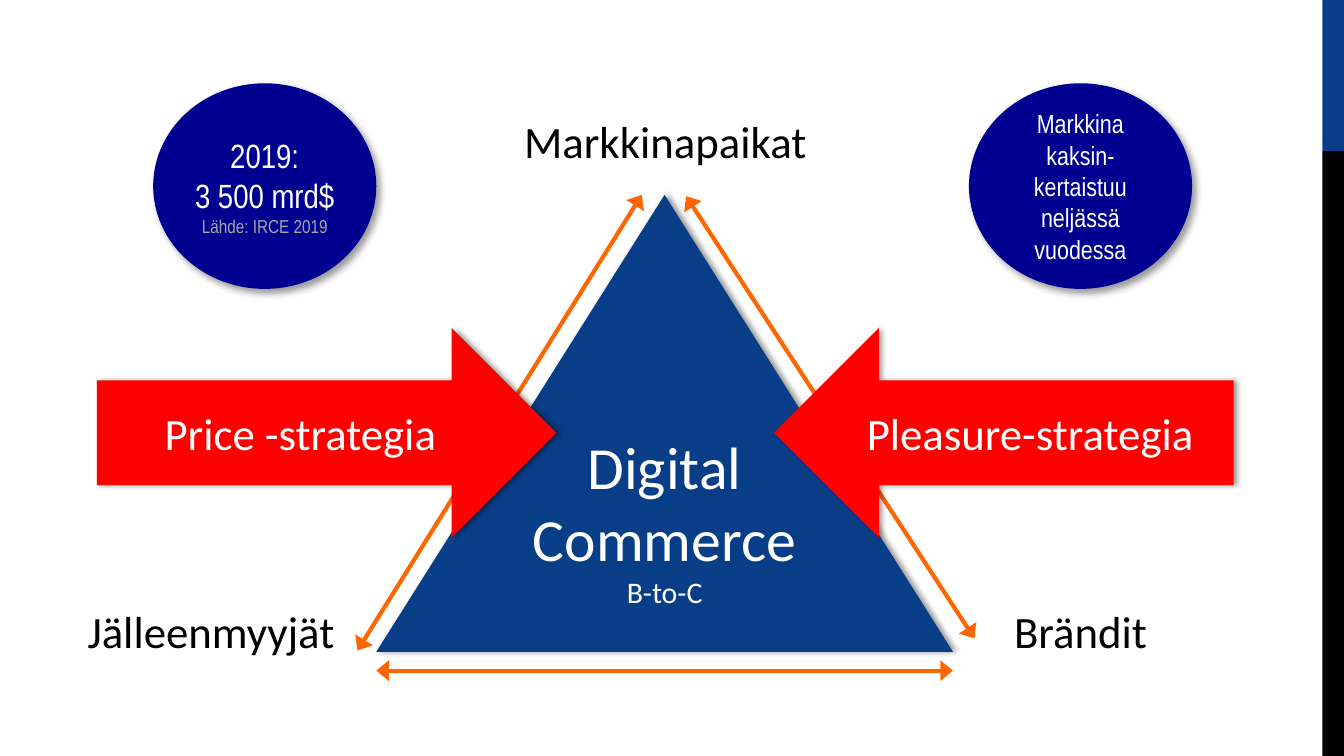
from dataclasses import dataclass
from lxml.etree import SubElement
from pptx import Presentation
from pptx.dml.color import RGBColor
from pptx.enum.shapes import MSO_CONNECTOR, MSO_SHAPE
from pptx.enum.text import MSO_ANCHOR, MSO_AUTO_SIZE, PP_ALIGN
from pptx.oxml.ns import qn
from pptx.util import Inches, Pt


@dataclass(frozen=True)
class Theme:
    blue: str = "073E87"
    navy: str = "000090"
    red: str = "FF0000"
    orange: str = "FF6600"
    black: str = "000000"
    white: str = "FFFFFF"
    gray: str = "A6A6A6"
    body: str = "Calibri"
    narrow: str = "Arial Narrow"
    hero: int = 32
    label: int = 24
    fact: int = 18
    sub: int = 16
    note: int = 14
    source: int = 10
    line: float = 2.25


THEME = Theme()
WIDE = 10
HIGH = WIDE * 9 / 16
SOFT = (3.1, 1.8, 0)  # blur, distance, angle
DEEP = (4, 3, 45)
INSET = (0.1, 0.05)
TIGHT = (0, 0.05)


def assign(item, values):
    for name, value in values.items():
        setattr(item, name, value)


def write(shape, lines, face, anchor=MSO_ANCHOR.MIDDLE, inset=INSET):
    """Fill a shape with centred lines, each a (text, size, colour)."""
    side, edge = map(Inches, inset)
    frame = shape.text_frame
    assign(frame, dict(word_wrap=True, vertical_anchor=anchor,
                       margin_left=side, margin_right=side,
                       margin_top=edge, margin_bottom=edge))
    for index, (text, size, color) in enumerate(lines):
        para = frame.add_paragraph() if index else frame.paragraphs[0]
        para.alignment = PP_ALIGN.CENTER
        run = para.add_run()
        run.text = text
        assign(run.font, dict(name=face, size=Pt(size)))
        run.font.color.rgb = RGBColor.from_string(color)


def cast(shape, shade):
    """Give a shape an outer shadow."""
    blur, dist, angle = shade
    effects = shape._element.spPr.find(qn("a:effectLst"))
    outer = SubElement(effects, qn("a:outerShdw"), blurRad=str(Pt(blur)),
                       dist=str(Pt(dist)), dir=str(angle * 60000),
                       algn="tl", rotWithShape="0")
    color = SubElement(outer, qn("a:srgbClr"), val=THEME.black)
    SubElement(color, qn("a:alpha"), val="40000")


def draw(slide, kind, box, color, shade=None):
    shape = slide.shapes.add_shape(kind, *map(Inches, box))
    shape.shadow.inherit = False
    shape.fill.solid()
    shape.fill.fore_color.rgb = RGBColor.from_string(color)
    shape.line.fill.background()
    if shade:
        cast(shape, shade)
    return shape


def link(slide, start, end):
    """Draw a line with an arrowhead at both ends."""
    line = slide.shapes.add_connector(
        MSO_CONNECTOR.STRAIGHT, *map(Inches, (*start, *end)))
    line.line.width = Pt(THEME.line)
    line.line.color.rgb = RGBColor.from_string(THEME.orange)
    stroke = line.line._get_or_add_ln()
    for tag in ("a:headEnd", "a:tailEnd"):
        SubElement(stroke, qn(tag), type="triangle", w="lg", len="med")
    SubElement(line._element.spPr, qn("a:effectLst"))


def sidebar(slide, box):
    left, top, width, height = box
    split = height / 5
    draw(slide, MSO_SHAPE.RECTANGLE, (left, top, width, split), THEME.blue)
    draw(slide, MSO_SHAPE.RECTANGLE,
         (left, top + split, width, height - split), THEME.black)


def label(slide, box, text):
    shape = slide.shapes.add_textbox(*map(Inches, box))
    write(shape, [(text, THEME.label, THEME.black)], THEME.body,
          MSO_ANCHOR.TOP)
    shape.text_frame.auto_size = MSO_AUTO_SIZE.SHAPE_TO_FIT_TEXT


def pyramid(slide, box):
    """Draw the triangle, its corner labels and the links along its sides."""
    left, top, width, height = box
    right, base, peak = left + width, top + height, left + width / 2
    shape = draw(slide, MSO_SHAPE.ISOSCELES_TRIANGLE, box, THEME.blue, SOFT)
    write(shape, [("Digital", THEME.hero, THEME.white),
                  ("Commerce", THEME.hero, THEME.white),
                  ("B-to-C", THEME.sub, THEME.white)],
          THEME.body, MSO_ANCHOR.TOP, TIGHT)

    label(slide, (peak - 1.44, top - 0.65, 2.89, 0.5), "Markkinapaikat")
    low = base - 0.41
    label(slide, (left - 2.38, low, 2.3, 0.5), "Jälleenmyyjät")
    label(slide, (right - 0.2, low, 2.3, 0.5), "Brändit")

    link(slide, (peak + 0.16, top + 0.01), (right + 0.16, base - 0.1))
    link(slide, (left, base + 0.14), (right, base + 0.14))
    link(slide, (left - 0.14, base - 0.01), (peak - 0.17, top))


def strategy(slide, box, text, flip=False):
    shape = draw(slide, MSO_SHAPE.RIGHT_ARROW, box, THEME.red, SOFT)
    if flip:
        shape._element.spPr.find(qn("a:xfrm")).set("flipH", "1")
    write(shape, [(text, THEME.label, THEME.white)], THEME.body)


def bubble(slide, box, lines, inset=INSET):
    shape = draw(slide, MSO_SHAPE.OVAL, box, THEME.navy, DEEP)
    write(shape, lines, THEME.narrow, inset=inset)


def main():
    deck = Presentation()
    assign(deck, dict(slide_width=Inches(WIDE), slide_height=Inches(HIGH)))
    slide = deck.slides.add_slide(deck.slide_layouts[6])

    sidebar(slide, (WIDE - 0.16, 0, 0.16, HIGH))
    pyramid(slide, (2.8, 1.45, 4.29, 3.4))
    strategy(slide, (0.72, 2.44, 3.42, 1.56), "Price -strategia")
    strategy(slide, (5.76, 2.44, 3.42, 1.56), "Pleasure-strategia", True)
    bubble(slide, (7.21, 0.62, 1.66, 1.53),
           [("Markkina kaksin-kertaistuu neljässä vuodessa",
             THEME.note, THEME.white)])
    bubble(slide, (1.14, 0.62, 1.66, 1.53),
           [("2019:", THEME.fact, THEME.white),
            ("3 500 mrd$", THEME.fact, THEME.white),
            ("Lähde: IRCE 2019", THEME.source, THEME.gray)], TIGHT)

    deck.save("out.pptx")


if __name__ == "__main__":
    main()
